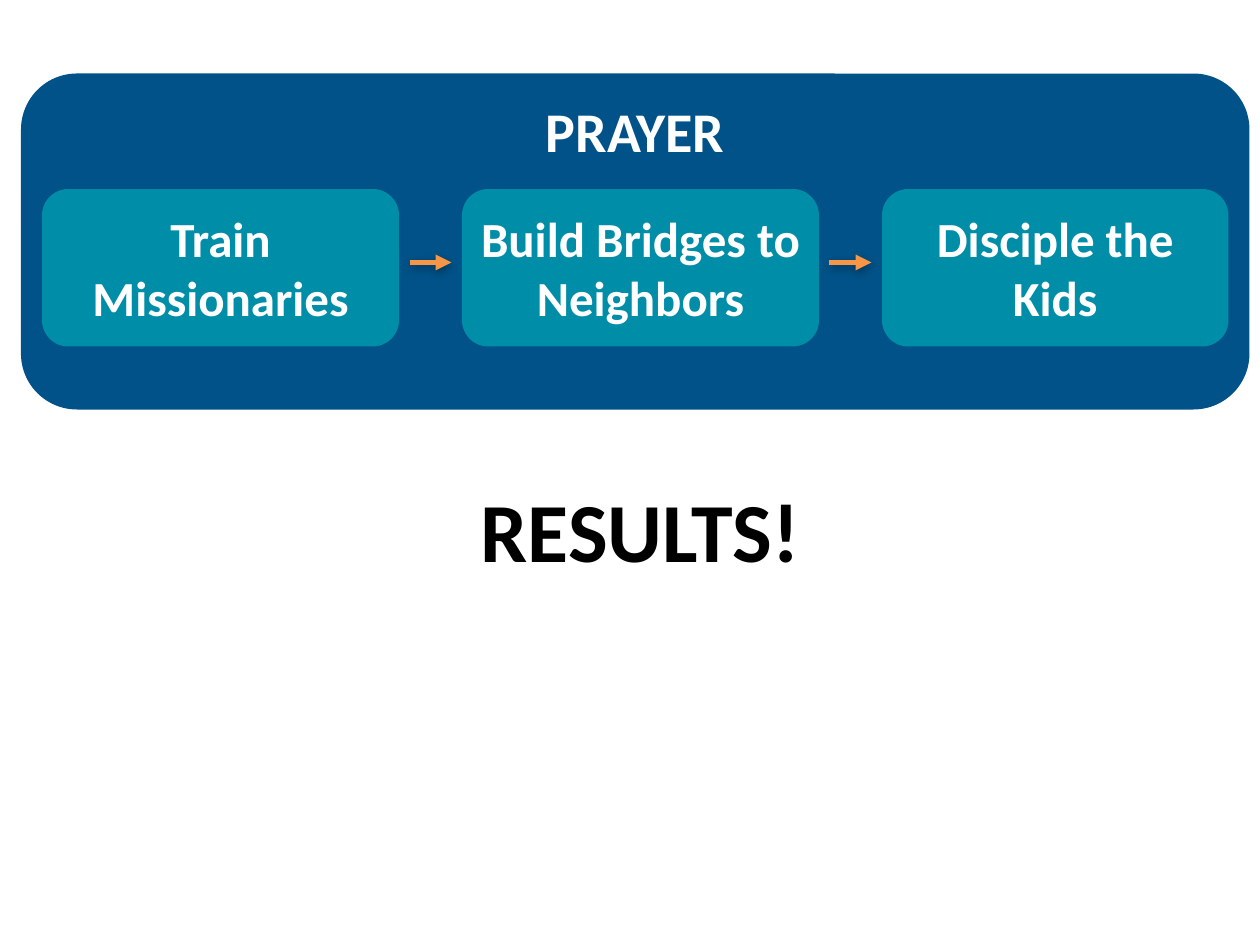
from lxml import etree
from pptx import Presentation
from pptx.dml.color import RGBColor
from pptx.enum.shapes import MSO_CONNECTOR as Connector, MSO_SHAPE as Shape
from pptx.enum.text import MSO_ANCHOR as Anchor, MSO_AUTO_SIZE as AutoSize, PP_ALIGN as Align
from pptx.oxml import parse_xml
from pptx.oxml.ns import nsdecls, qn
from pptx.util import Inches, Pt

FONT = "Calibri"
NAVY, TEAL, ORANGE = "005288", "008DA8", "F79646"
WHITE, BLACK = "FFFFFF", "000000"

# Steps: label, first column, width in columns
STEPS = [
    ("Train Missionaries", 4, 34),
    ("Build Bridges to Neighbors", 44, 34),
    ("Disciple the Kids", 84, 33),
]
STEP_ROW, STEP_ROWS = 18, 15
ARROW_ROW, ARROW_GAP, ARROW_COLUMNS = 25, 5, 4


def color(hex_value):
    return RGBColor.from_string(hex_value)


def grid(*cells):
    """Turn columns or rows (12 to the inch) into lengths."""
    return [Inches(cell / 12) for cell in cells]


def write(frame, words, size, hex_value, anchor=Anchor.TOP):
    frame.word_wrap = True
    frame.vertical_anchor = anchor
    paragraph = frame.paragraphs[0]
    paragraph.alignment = Align.CENTER
    run = paragraph.add_run()
    run.text = words
    run.font.name, run.font.size, run.font.bold = FONT, Pt(size), True
    run.font.color.rgb = color(hex_value)


def add_panel(slide, cells, fill, words, size, anchor):
    panel = slide.shapes.add_shape(Shape.FLOWCHART_ALTERNATE_PROCESS, *grid(*cells))
    panel.shadow.inherit = False
    panel.fill.solid()
    panel.fill.fore_color.rgb = color(fill)
    panel.line.fill.background()
    frame = panel.text_frame
    frame.margin_left = frame.margin_right = 0
    write(frame, words, size, WHITE, anchor)


def add_arrow(slide, start, end, row):
    arrow = slide.shapes.add_connector(Connector.STRAIGHT, *grid(start, row, end, row))
    arrow.line.color.rgb = color(ORANGE)
    arrow.line.width = Pt(3)
    etree.SubElement(arrow.line._get_or_add_ln(), qn("a:tailEnd"), type="triangle")
    # Soft shadow straight below the arrow
    arrow._element.spPr.append(parse_xml(
        f'<a:effectLst {nsdecls("a")}>'
        f'<a:outerShdw blurRad="{Pt(5)}" dist="{Pt(1.8)}" dir="5400000" rotWithShape="0">'
        f'<a:srgbClr val="{BLACK}"><a:alpha val="35000"/></a:srgbClr>'
        '</a:outerShdw></a:effectLst>'))


def add_heading(slide, cells, words, size):
    heading = slide.shapes.add_textbox(*grid(*cells))
    write(heading.text_frame, words, size, BLACK)
    heading.text_frame.auto_size = AutoSize.SHAPE_TO_FIT_TEXT


def main():
    deck = Presentation()
    deck.slide_width, deck.slide_height = Inches(10), Inches(7.5)
    slide = deck.slides.add_slide(deck.slide_layouts[6])

    # Outcome below the process
    add_heading(slide, (8, 45, 106, 20.6), "RESULTS!", 48)

    # Prayer surrounds every step
    add_panel(slide, (2, 7, 117, 32), NAVY, "PRAYER", 32, Anchor.TOP)
    for label, column, width in STEPS:
        add_panel(slide, (column, STEP_ROW, width, STEP_ROWS), TEAL, label, 28, Anchor.MIDDLE)

    # An arrow leads into each later step
    for _, column, _ in STEPS[1:]:
        start = column - ARROW_GAP
        add_arrow(slide, start, start + ARROW_COLUMNS, ARROW_ROW)

    deck.save("out.pptx")


if __name__ == "__main__":
    main()
